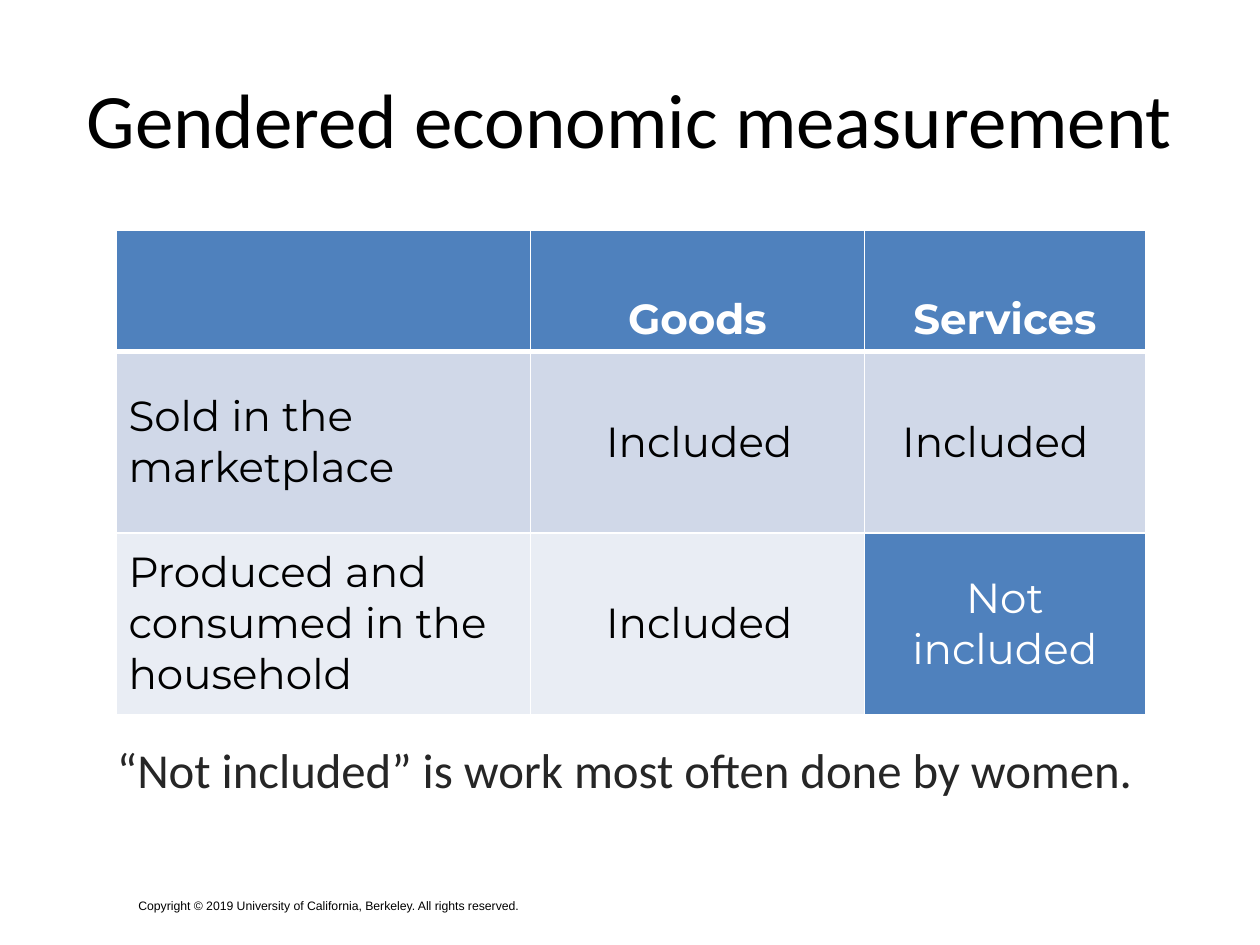
from dataclasses import dataclass

from lxml import etree
from pptx import Presentation
from pptx.dml.color import RGBColor
from pptx.enum.text import MSO_ANCHOR, PP_ALIGN
from pptx.oxml.ns import qn
from pptx.util import Inches, Pt

TOP, MIDDLE, BOTTOM = MSO_ANCHOR.TOP, MSO_ANCHOR.MIDDLE, MSO_ANCHOR.BOTTOM
LEFT, CENTER = PP_ALIGN.LEFT, PP_ALIGN.CENTER


@dataclass(frozen=True)
class Theme:
    """Colours, fonts and type sizes of the slide."""
    black: str = "000000"
    white: str = "FFFFFF"
    charcoal: str = "262626"
    accent: str = "4F81BD"
    bands: tuple = ("D0D8E8", "E9EDF4")
    heading_font: str = "Calibri"
    table_font: str = "Montserrat"
    footer_font: str = "Arial"
    title_size: float = 44
    note_size: float = 27.9
    table_size: float = 24
    footer_size: float = 7
    rule: float = 1
    header_rule: float = 3


def write(frame, text, *, font, size, color, bold=False, align=LEFT,
          anchor=TOP, indent=0, line_spacing=None):
    """Put one formatted paragraph into a text frame."""
    frame.word_wrap = True
    frame.vertical_anchor = anchor
    paragraph = frame.paragraphs[0]
    paragraph.alignment = align
    if indent:
        properties = paragraph._p.get_or_add_pPr()
        properties.set("marL", str(Inches(indent)))
        properties.set("indent", "0")
    if line_spacing:
        paragraph.line_spacing = line_spacing
    run = paragraph.add_run()
    run.text = text
    run.font.name = font
    run.font.size = Pt(size)
    run.font.bold = bold
    run.font.color.rgb = RGBColor.from_string(color)


class SlideBuilder:
    """Hold the theme and the current slide, and add its elements."""

    def __init__(self, slide, theme):
        self.slide = slide
        self.theme = theme

    def title(self, text, left, top, width, height):
        """Place and fill the title placeholder."""
        title = self.slide.shapes.title
        title.left, title.top = Inches(left), Inches(top)
        title.width, title.height = Inches(width), Inches(height)
        write(title.text_frame, text, font=self.theme.heading_font,
              size=self.theme.title_size, color=self.theme.black,
              align=CENTER, anchor=MIDDLE)

    def text(self, text, left, top, width, height, **style):
        """Add a text box."""
        box = self.slide.shapes.add_textbox(
            Inches(left), Inches(top), Inches(width), Inches(height))
        write(box.text_frame, text, **style)

    def borders(self, cell, **widths):
        """Draw the four white cell borders, in schema order."""
        properties = cell._tc.get_or_add_tcPr()
        for position, side in enumerate("LRTB"):
            width = widths.get(side, self.theme.rule)
            line = etree.Element(qn(f"a:ln{side}"), w=str(Pt(width)))
            fill = etree.SubElement(line, qn("a:solidFill"))
            etree.SubElement(fill, qn("a:srgbClr"), val=self.theme.white)
            properties.insert(position, line)

    def cell(self, cell, text, fill, **style):
        """Fill a table cell and write its text."""
        cell.fill.solid()
        cell.fill.fore_color.rgb = RGBColor.from_string(fill)
        cell.vertical_anchor = style["anchor"]
        if text:
            write(cell.text_frame, text, font=self.theme.table_font,
                  size=self.theme.table_size, **style)
            cell.text_frame._txBody.bodyPr.attrib.clear()

    def table(self, header, body, left, top, widths, heights):
        """Add a table with a header row, banded rows and highlighted cells."""
        theme = self.theme
        table = self.slide.shapes.add_table(
            len(heights), len(widths), Inches(left), Inches(top),
            Inches(sum(widths)), Inches(sum(heights))).table
        for column, width in zip(table.columns, widths):
            column.width = Inches(width)
        for row, height in zip(table.rows, heights):
            row.height = Inches(height)
        for column, label in enumerate(header):
            cell = table.cell(0, column)
            self.cell(cell, label, theme.accent, color=theme.white, bold=True,
                      align=CENTER, anchor=BOTTOM)
            self.borders(cell, B=theme.header_rule)
        for row, (entries, band) in enumerate(zip(body, theme.bands), 1):
            top_rule = theme.header_rule if row == 1 else theme.rule
            for column, (label, indent, excluded) in enumerate(entries):
                cell = table.cell(row, column)
                self.cell(cell, label, theme.accent if excluded else band,
                          color=theme.white if excluded else theme.black,
                          align=CENTER if excluded else LEFT,
                          anchor=MIDDLE, indent=indent)
                self.borders(cell, T=top_rule)


def main():
    """Build the slide and save it."""
    theme = Theme()
    deck = Presentation()
    deck.slide_width, deck.slide_height = Inches(10), Inches(7.5)
    builder = SlideBuilder(deck.slides.add_slide(deck.slide_layouts[5]), theme)

    builder.text(
        "Copyright © 2019 University of California, Berkeley. All rights reserved.",
        1, 7.08, 5.42, 0.22, font=theme.footer_font, size=theme.footer_size,
        color=theme.black)
    goods = ("Included", 0.5, False)
    market_services = ("Included", 0.2, False)
    household_services = ("Not included", 0, True)
    builder.table(
        ("", "Goods", "Services"),
        ((("Sold in the marketplace", 0, False), goods, market_services),
         (("Produced and consumed in the household", 0, False), goods,
          household_services)),
        0.92, 1.83, widths=(3.29, 2.65, 2.23), heights=(0.96, 1.44, 1.44))
    builder.title("Gendered economic measurement", 0, 0.05, 10, 1.77)
    builder.text(
        "“Not included” is work most often done by women.",
        0.83, 5.66, 8.33, 0.72, font=theme.heading_font, size=theme.note_size,
        color=theme.charcoal, anchor=BOTTOM, line_spacing=0.8)
    deck.save("out.pptx")


if __name__ == "__main__":
    main()
